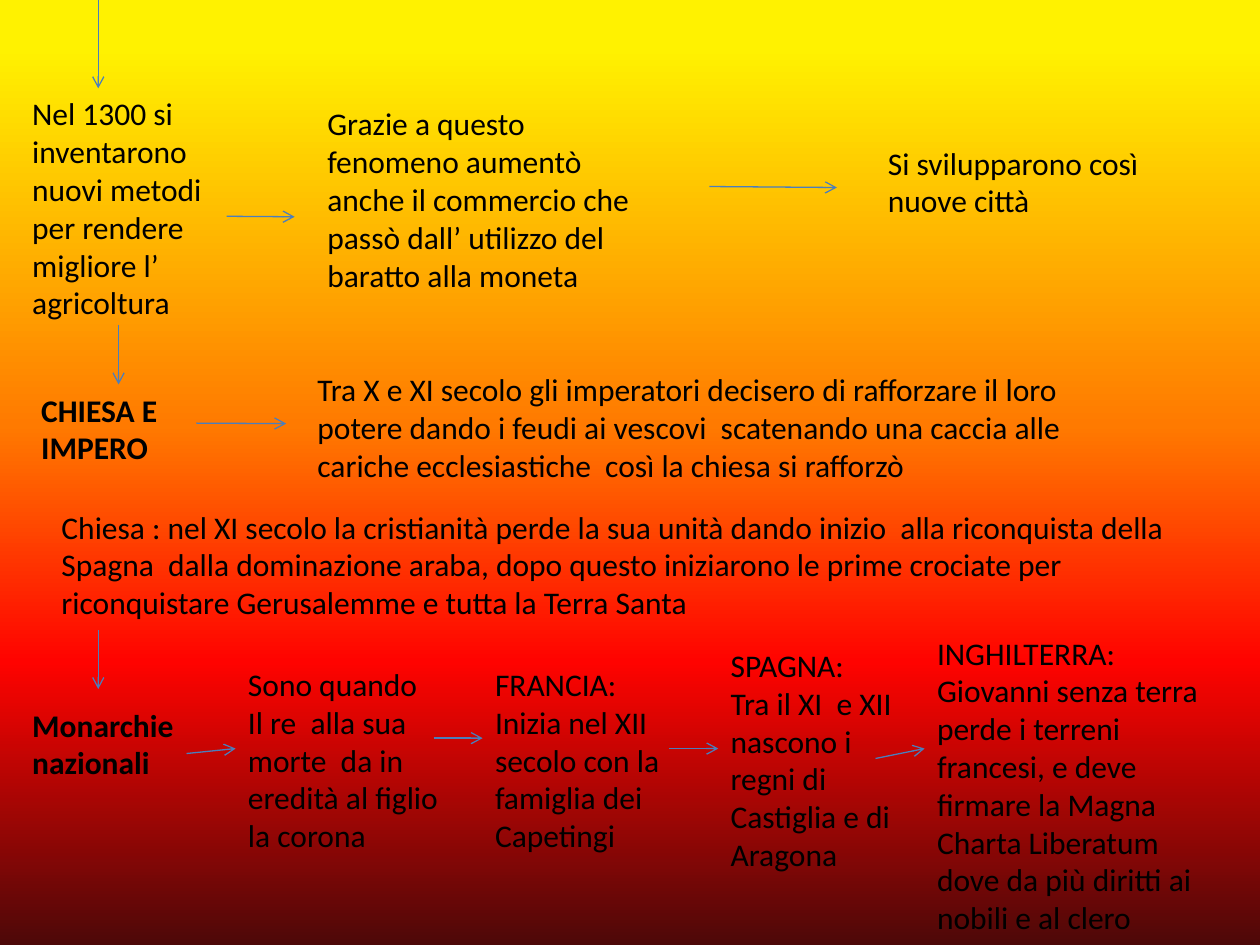
import pptx
import pptx.dml.color
import pptx.enum.shapes
import pptx.enum.text
import pptx.oxml
import pptx.oxml.ns
import pptx.util
from lxml import etree

Cm = pptx.util.Cm
qn = pptx.oxml.ns.qn
RGB = pptx.dml.color.RGBColor.from_string

COLORS = {
    "text": "000000",
    "arrow": "4B7EBC",
    "yellow": "FFF200",
    "orange": "FF7A00",
    "red": "FF0300",
    "dark_red": "4D0808",
}
FORMAT = {"name": "Calibri", "size": pptx.util.Pt(18)}

deck = pptx.Presentation()
deck.slide_width, deck.slide_height = Cm(25.4), Cm(19.05)
slide = deck.slides.add_slide(deck.slide_layouts[6])

sunset = slide.background.fill
sunset.gradient()
sunset.gradient_angle = 270
stops = slide.element.find(".//" + qn("a:gsLst"))
for stop in list(stops):
    stops.remove(stop)
for percent, color in [(5, "yellow"), (45, "orange"), (70, "red"), (100, "dark_red")]:
    stop = etree.SubElement(stops, qn("a:gs"), pos=str(percent * 1000))
    etree.SubElement(stop, qn("a:srgbClr"), val=COLORS[color])

passages = [
    (0.4, 1.78, 4.78, 4.88, False,
     "Nel 1300 si inventarono nuovi metodi per rendere migliore l’ agricoltura"),
    (6.35, 1.98, 7.14, 4.11, False,
     "Grazie a questo fenomeno aumentò anche il commercio che passò dall’ utilizzo "
     "del baratto alla moneta"),
    (17.65, 2.77, 6.15, 1.8, False, "Si svilupparono così nuove città"),
    (0.58, 7.75, 3.18, 1.8, True, "CHIESA E\nIMPERO"),
    (6.15, 7.34, 16.28, 2.57, False,
     "Tra X e XI secolo gli imperatori decisero di rafforzare il loro potere dando i "
     "feudi ai vescovi  scatenando una caccia alle cariche ecclesiastiche  così la "
     "chiesa si rafforzò"),
    (0.99, 10.11, 23.42, 2.57, False,
     "Chiesa : nel XI secolo la cristianità perde la sua unità dando inizio  alla "
     "riconquista della Spagna  dalla dominazione araba, dopo questo iniziarono le "
     "prime crociate per riconquistare Gerusalemme e tutta la Terra Santa"),
    (0.4, 14.1, 3.58, 1.8, True, "Monarchie\nnazionali"),
    (4.75, 13.28, 4.95, 4.11, False,
     "Sono quando\nIl re  alla sua morte  da in eredità al figlio  la corona"),
    (9.73, 13.28, 4.57, 4.11, False,
     "FRANCIA:\nInizia nel XII secolo con la famiglia dei Capetingi"),
    (14.48, 12.9, 3.76, 4.88, False,
     "SPAGNA:\nTra il XI  e XII nascono i regni di Castiglia e di Aragona"),
    (18.64, 12.65, 6.15, 6.4, False,
     "INGHILTERRA:\nGiovanni senza terra perde i terreni francesi, e deve firmare la "
     "Magna Charta Liberatum dove da più diritti ai nobili e al clero"),
]
for left, top, width, height, bold, wording in passages:
    passage = slide.shapes.add_textbox(Cm(left), Cm(top), Cm(width), Cm(height)).text_frame
    passage.word_wrap = True
    passage.auto_size = pptx.enum.text.MSO_AUTO_SIZE.SHAPE_TO_FIT_TEXT
    passage.text = wording
    for paragraph in passage.paragraphs:
        for run in paragraph.runs:
            for attribute, value in {**FORMAT, "bold": bold}.items():
                setattr(run.font, attribute, value)
            run.font.color.rgb = RGB(COLORS["text"])

steps = [
    (1.98, 0, 1.98, 1.78),
    (4.57, 4.36, 5.94, 4.37),
    (14.3, 3.76, 16.87, 3.78),
    (2.39, 6.55, 2.39, 7.75),
    (3.96, 8.53, 5.77, 8.54),
    (1.98, 12.7, 1.98, 13.89),
    (3.76, 15.19, 4.75, 15.09),
    (8.74, 14.88, 9.73, 14.88),
    (13.49, 15.09, 14.48, 15.09),
    (17.65, 15.29, 18.64, 15.09),
]
for step in steps:
    arrow = slide.shapes.add_connector(
        pptx.enum.shapes.MSO_CONNECTOR.STRAIGHT, *map(Cm, step))
    arrow.line.color.rgb = RGB(COLORS["arrow"])
    arrow.line.width = pptx.util.Pt(0.75)
    outline = arrow.line._get_or_add_ln()
    etree.SubElement(outline, qn("a:tailEnd"), type="arrow")
    etree.SubElement(arrow.element.spPr, qn("a:effectLst"))

deck.save("out.pptx")
